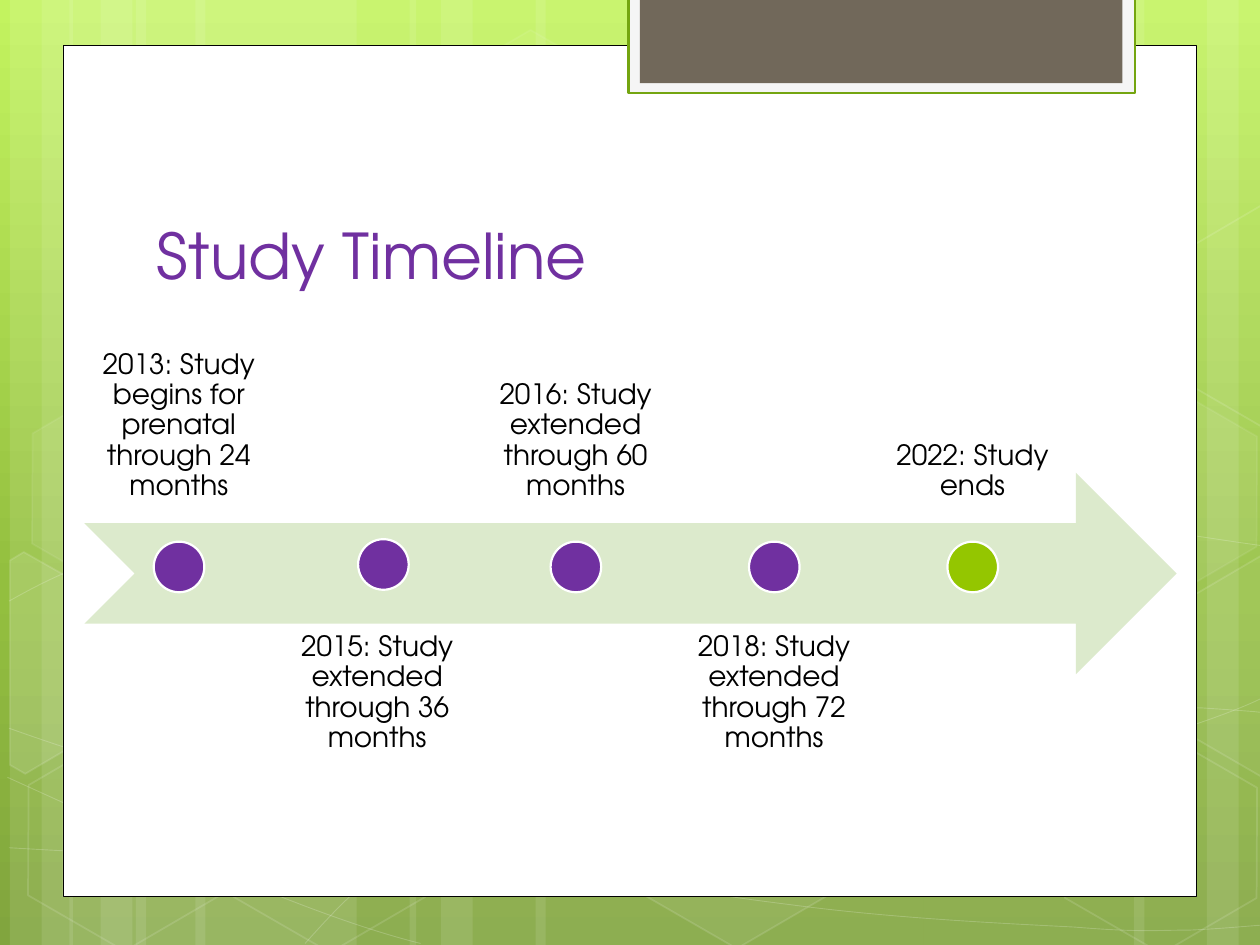
from copy import deepcopy

from lxml import etree
from pptx import Presentation
from pptx.dml.color import RGBColor
from pptx.enum.shapes import MSO_SHAPE
from pptx.enum.text import MSO_ANCHOR, MSO_AUTO_SIZE, PP_ALIGN
from pptx.oxml.ns import qn
from pptx.util import Cm, Pt

RECT, HEXAGON, OVAL = MSO_SHAPE.RECTANGLE, MSO_SHAPE.HEXAGON, MSO_SHAPE.OVAL
ARROW = MSO_SHAPE.NOTCHED_RIGHT_ARROW
TOP, BOTTOM = MSO_ANCHOR.TOP, MSO_ANCHOR.BOTTOM
LEFT, CENTER = PP_ALIGN.LEFT, PP_ALIGN.CENTER
FONT = "TeX Gyre Adventor"
COLORS = {
    "sky": "C3F35F", "leaf": "93BF3F", "moss": "81A53E",
    "white": "FFFFFF", "black": "000000", "tab": "F5F5F5", "tab_edge": "74A510",
    "brown": "71685A", "purple": "7030A0", "green": "94C600", "arrow": "DCEACC",
}


def paint(sp, fill=None, line=None, width=1, fill_alpha=100, line_alpha=100):
    """Set fill and line of a shape; alphas are percentages."""
    sp.shadow.inherit = False
    for fmt, color, alpha in ((sp.fill, fill, fill_alpha), (sp.line.fill, line, line_alpha)):
        if color is None:
            fmt.background()
            continue
        fmt.solid()
        fmt.fore_color.rgb = RGBColor.from_string(COLORS[color])
        if alpha < 100:
            owner = sp._element.spPr if fmt is sp.fill else sp.line._ln
            rgb = owner.find(qn("a:solidFill")).find(qn("a:srgbClr"))
            etree.SubElement(rgb, qn("a:alpha")).set("val", str(alpha * 1000))
    if line:
        sp.line.width = Pt(width)


def write_text(tf, text, size=16, color="black", align=CENTER, anchor=TOP,
               inset=None, spacing=None, after=None):
    tf.word_wrap = True
    tf.auto_size = MSO_AUTO_SIZE.NONE
    tf.vertical_anchor = anchor
    if inset is not None:
        tf.margin_left = tf.margin_right = tf.margin_top = tf.margin_bottom = Cm(inset)
    p = tf.paragraphs[0]
    p.alignment = align
    if spacing:
        p.line_spacing = spacing
    if after:
        p.space_after = Pt(after)
    r = p.add_run()
    r.text = text
    r.font.name, r.font.size = FONT, Pt(size)
    r.font.color.rgb = RGBColor.from_string(COLORS[color])


prs = Presentation()
prs.slide_width, prs.slide_height = Cm(25.4), Cm(19.05)
s = prs.slides.add_slide(prs.slide_layouts[5])
shapes = s.shapes

# Background gradient
bg = s.background.fill
bg.gradient()
bg.gradient_angle = 270
stop_list = s._element.find(".//" + qn("a:gsLst"))
stop_list.append(deepcopy(stop_list[0]))
for stop, (position, color) in zip(bg.gradient_stops,
                                   ((0, "sky"), (0.62, "leaf"), (1, "moss"))):
    stop.position = position
    stop.color.rgb = RGBColor.from_string(COLORS[color])

# Translucent vertical bands: left, width
for left, width in ((2.74, 4.45), (0.2, 1.27), (0.84, 2.11), (3.94, 4.45),
                    (1.4, 1.27), (2.03, 2.11), (18.62, 4.45), (24.33, 1.27),
                    (22.86, 2.11), (10.8, 7.82), (8.26, 1.27), (8.89, 2.11)):
    sp = shapes.add_shape(RECT, Cm(left), 0, Cm(width), prs.slide_height)
    paint(sp, "white", fill_alpha=10)

# Sweeping curves: a start, then three Bezier points per segment, in 0.01 cm
curves = (
    [(18, 1709), (155, 1717), (292, 1725), (483, 1722), (673, 1720), (909, 1714),
     (1163, 1689), (1417, 1664), (1778, 1615), (2012, 1567), (2243, 1519),
     (2482, 1443), (2558, 1400)],
    [(18, 1212), (91, 1171), (165, 1133), (307, 1095), (452, 1057), (658, 1001),
     (881, 983), (1107, 965), (1382, 963), (1661, 983), (1941, 1003),
     (2405, 1082), (2558, 1102)],
    [(15, 1567), (323, 1707), (627, 1847), (848, 1902)],
    [(18, 1468), (97, 1496), (178, 1524), (325, 1565), (472, 1603), (693, 1666),
     (907, 1709), (1118, 1753), (1384, 1798), (1595, 1824), (1806, 1852),
     (2032, 1862), (2167, 1869), (2299, 1880), (2334, 1875), (2400, 1875),
     (2466, 1872), (2512, 1867), (2558, 1864)],
    [(615, 1902), (660, 1852), (706, 1801), (767, 1755), (828, 1709), (914, 1659),
     (986, 1623), (1057, 1588), (1100, 1572), (1194, 1547), (1285, 1521),
     (1455, 1486), (1544, 1468), (1636, 1450), (1648, 1450), (1727, 1445),
     (1806, 1438), (1930, 1430), (2017, 1427), (2106, 1425), (2250, 1427),
     (2250, 1427), (2307, 1427), (2364, 1427), (2421, 1427), (2466, 1430),
     (2510, 1433), (2532, 1435), (2555, 1438), (2548, 1435), (2555, 1438)],
)
for start, *points in curves:
    builder = shapes.build_freeform(*start, scale=Cm(0.01))
    builder.add_line_segments(points, close=False)
    sp = builder.convert_to_shape()
    outline = sp._element.find(".//" + qn("a:path"))
    steps = outline.findall(qn("a:lnTo"))
    for i in range(0, len(steps), 3):
        bezier = etree.SubElement(outline, qn("a:cubicBezTo"))
        for step in steps[i:i + 3]:
            bezier.append(step[0])
            outline.remove(step)
    paint(sp, line="white", width=0.5, line_alpha=20)

# Hexagons: left, top, fill alpha, line alpha
for left, top, fill_alpha, line_alpha in (
        (8.48, 0.91, 4, 8), (12.62, 14.96, 6, 12), (0.28, 15.01, 0, 12),
        (0.36, 7.92, 7, 8), (4.42, 15.04, 0, 12), (19.13, 11.51, 10, 12),
        (21.18, 15.06, 0, 12), (21.18, 7.98, 7, 8)):
    sp = shapes.add_shape(HEXAGON, Cm(left), Cm(top), Cm(4.45), Cm(3.86))
    sp.adjustments[0], sp.adjustments[1] = 0.285, 1.155
    sp.rotation = 30
    paint(sp, "white" if fill_alpha else None, "white", 1, fill_alpha, line_alpha)

# Hexagons cut by the slide edge, in 0.01 cm
for fill_alpha, (start, *points) in (
        (10, [(20, 1130), (48, 1113), (244, 1224), (241, 1448), (51, 1560), (20, 1542)]),
        (4, [(2352, 1232), (2543, 1120), (2563, 1133), (2563, 1557), (2545, 1567), (2352, 1455)]),
        (0, [(2352, 526), (2543, 414), (2565, 427), (2563, 851), (2545, 861), (2352, 749)])):
    builder = shapes.build_freeform(*start, scale=Cm(0.01))
    builder.add_line_segments(points, close=True)
    paint(builder.convert_to_shape(), "white" if fill_alpha else None, "white", 1, fill_alpha, 12)

# White page and the tab at its top
for left, top, width, height, fill, line, weight in (
        (1.27, 0.91, 22.86, 17.17, "white", "black", 0.5),
        (12.67, -0.05, 10.21, 1.93, "tab", "tab_edge", 1.25),
        (12.9, -0.05, 9.73, 1.73, "brown", None, 0)):
    sp = shapes.add_shape(RECT, Cm(left), Cm(top), Cm(width), Cm(height))
    paint(sp, fill, line, weight)

# Title, brought in front of the page
title = shapes.title
title.left, title.top, title.width, title.height = Cm(2.9), Cm(2.84), Cm(19.51), Cm(3.18)
write_text(title.text_frame, "Study Timeline", size=36, color="purple", align=LEFT, anchor=BOTTOM)
shapes._spTree.append(title._element)

# Timeline arrow
sp = shapes.add_shape(ARROW, Cm(1.7), Cm(9.53), Cm(22.02), Cm(4.06))
paint(sp, "arrow")

# Milestones: labels alternate above and below; text, dot colour, dot shift
milestones = (
    ("2013: Study begins for prenatal through 24 months", "purple", (0, 0)),
    ("2015: Study extended through 36 months", "purple", (0.12, -0.05)),
    ("2016: Study extended through 60 months", "purple", (0, 0)),
    ("2018: Study extended through 72 months", "purple", (0, 0)),
    ("2022: Study ends", "green", (0, 0)),
)
for i, (text, color, (dx, dy)) in enumerate(milestones):
    left = 1.7 + 4 * i
    above = i % 2 == 0
    sp = shapes.add_textbox(Cm(left), Cm(6.35 if above else 12.45), Cm(3.81), Cm(4.06))
    write_text(sp.text_frame, text, anchor=BOTTOM if above else TOP,
               inset=0.3, spacing=0.9, after=5.6)
    sp = shapes.add_shape(OVAL, Cm(left + 1.4 + dx), Cm(10.92 + dy), Cm(1.02), Cm(1.02))
    paint(sp, color, "white", 1.25)

prs.save("out.pptx")
